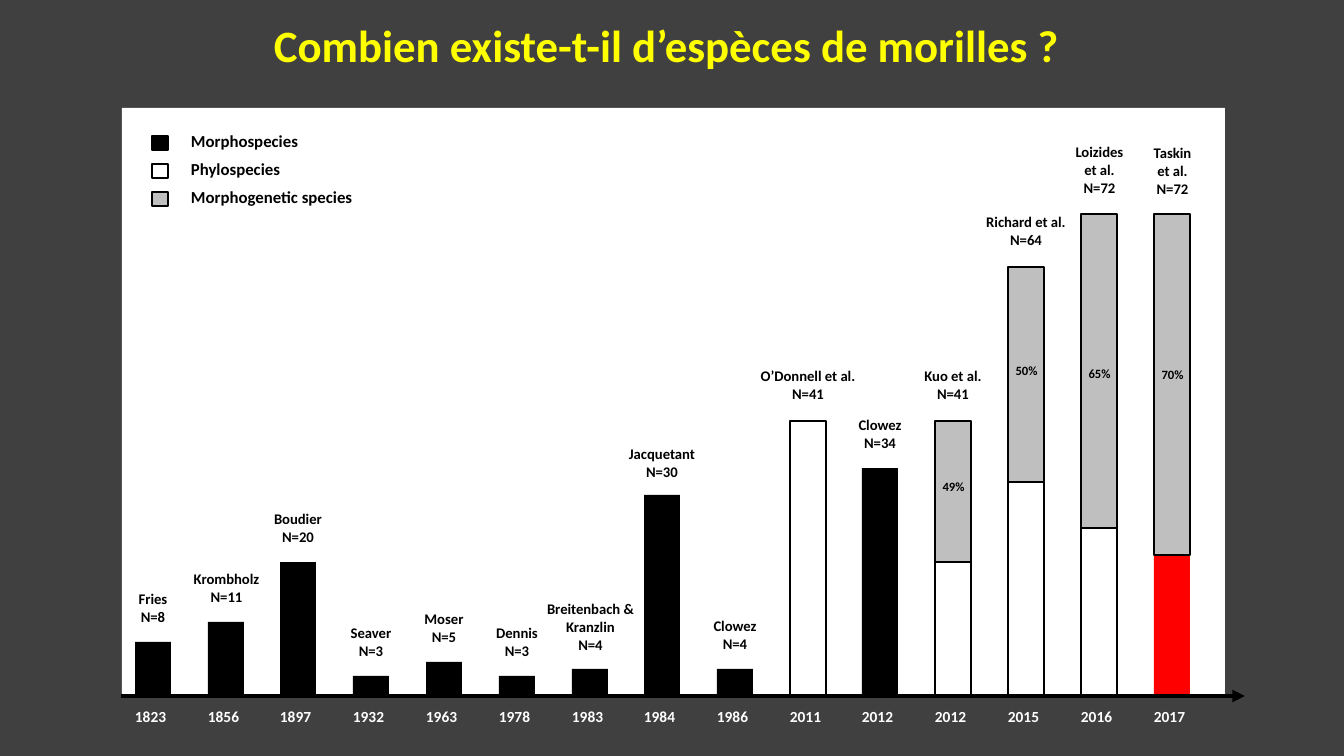
"""Builds a slide showing how many morel species each study recognised."""
from dataclasses import dataclass
from typing import NamedTuple

from lxml import etree
from pptx import Presentation
from pptx.dml.color import RGBColor
from pptx.enum.shapes import MSO_CONNECTOR, MSO_SHAPE
from pptx.enum.text import PP_ALIGN
from pptx.oxml.ns import qn
from pptx.util import Emu, Pt

RECTANGLE = MSO_SHAPE.RECTANGLE
STRAIGHT = MSO_CONNECTOR.STRAIGHT
LEFT, CENTER = PP_ALIGN.LEFT, PP_ALIGN.CENTER

SLIDE_WIDTH, SLIDE_HEIGHT = 1344, 756
EMU_PER_PX = 12192000 / SLIDE_WIDTH
BASELINE = 696
FIRST_BAR, BAR_STEP, BAR_WIDTH = 135, 72.75, 36
PX_PER_SPECIES = 6.7


@dataclass(frozen=True)
class Theme:
    """Colours and type sizes of the slide."""
    font: str = "Calibri"
    backdrop: str = "404040"
    panel: str = "FFFFFF"
    ink: str = "000000"
    title: str = "FFFF00"
    year: str = "FFFFFF"
    morpho: str = "000000"
    phylo: str = "FFFFFF"
    morphogenetic: str = "BFBFBF"
    highlight: str = "FF0000"
    title_size: float = 32
    legend_size: float = 12
    year_size: float = 11
    caption_size: float = 10.5
    share_size: float = 9
    caption_leading: float = 7.5
    caption_gap: float = 5.25
    outline: float = 1
    axis: float = 3


class Study(NamedTuple):
    """One bar: segments run upwards, rise is the caption's height above it."""
    year: str
    authors: tuple
    segments: tuple
    caption_width: int
    rise: int = 50
    share: str = ""
    share_top: int = 0
    wraps: bool = False


class MorelSlide:
    """Holds the theme and the current slide, and draws each kind of element."""

    def __init__(self, presentation, theme):
        """Add a blank slide with the theme's background."""
        self.theme = theme
        self.slide = presentation.slides.add_slide(presentation.slide_layouts[6])
        backdrop = self.slide.background.fill
        backdrop.solid()
        backdrop.fore_color.rgb = RGBColor.from_string(theme.backdrop)

    def frame(self, *lengths):
        """Turn px lengths into EMU."""
        return [Emu(round(length * EMU_PER_PX)) for length in lengths]

    def box(self, left, top, width, height, fill, outlined=False):
        """Draw a filled rectangle."""
        rect = self.slide.shapes.add_shape(RECTANGLE, *self.frame(left, top, width, height))
        rect.shadow.inherit = False
        rect.fill.solid()
        rect.fill.fore_color.rgb = RGBColor.from_string(fill)
        if outlined:
            rect.line.color.rgb = RGBColor.from_string(self.theme.ink)
            rect.line.width = Pt(self.theme.outline)
        else:
            rect.line.fill.background()

    def text(self, left, top, width, height, lines, size, color, align=LEFT, leadings=()):
        """Write bold lines, with a fixed leading for each line that has one."""
        frame = self.slide.shapes.add_textbox(*self.frame(left, top, width, height)).text_frame
        frame.word_wrap = True
        for number, line in enumerate(lines):
            paragraph = frame.add_paragraph() if number else frame.paragraphs[0]
            paragraph.alignment = align
            if number:
                paragraph.space_before = Pt(self.theme.caption_gap)
            if leadings and leadings[number]:
                paragraph.line_spacing = Pt(leadings[number])
            run = paragraph.add_run()
            run.text = line
            run.font.name = self.theme.font
            run.font.size = Pt(size)
            run.font.bold = True
            run.font.color.rgb = RGBColor.from_string(color)

    def arrow(self, start_x, start_y, end_x, end_y):
        """Draw the time axis with an arrowhead at its end."""
        axis = self.slide.shapes.add_connector(
            STRAIGHT, *self.frame(start_x, start_y, end_x, end_y))
        axis.line.color.rgb = RGBColor.from_string(self.theme.ink)
        axis.line.width = Pt(self.theme.axis)
        etree.SubElement(axis.line._get_or_add_ln(), qn("a:tailEnd"), type="triangle")
        etree.SubElement(axis._element.spPr, qn("a:effectLst"))

    def legend(self, entries):
        """List the kinds of species with their swatches."""
        for row, (label, fill) in enumerate(entries):
            self.box(152, 136 + 28 * row, 16, 14, fill, outlined=True)
            self.text(181, 126 + 28 * row, 206, 34, [label],
                      self.theme.legend_size, self.theme.ink)

    def study(self, index, study):
        """Draw a study's stacked bar, caption, share and year."""
        theme = self.theme
        left = round(FIRST_BAR + BAR_STEP * index)
        middle = left + BAR_WIDTH // 2
        total, top = 0, BASELINE
        for fill, species in study.segments:
            bottom = top
            total += species
            top = round(BASELINE - PX_PER_SPECIES * total)
            self.box(left, top, BAR_WIDTH, bottom - top, fill,
                     outlined=fill in (theme.phylo, theme.morphogenetic))
        lines = [*study.authors, f"N={total}"]
        leadings = [theme.caption_leading] * len(lines)
        if study.wraps:
            leadings[0] = None
        self.text(middle - study.caption_width // 2, top - study.rise, study.caption_width,
                  12 + 18 * len(lines), lines, theme.caption_size, theme.ink, CENTER, leadings)
        if study.share:
            self.text(middle - 25, study.share_top, 51, 28, [study.share],
                      theme.share_size, theme.ink, CENTER)
        self.text(left - 10, 702, 58, 29, [study.year], theme.year_size, theme.year)


def main():
    """Build and save the slide."""
    theme = Theme()
    morpho, phylo, mixed = theme.morpho, theme.phylo, theme.morphogenetic
    studies = [
        Study("1823", ("Fries",), ((morpho, 8),), 58),
        Study("1856", ("Krombholz",), ((morpho, 11),), 103),
        Study("1897", ("Boudier",), ((morpho, 20),), 82),
        Study("1932", ("Seaver",), ((morpho, 3),), 98),
        Study("1963", ("Moser",), ((morpho, 5),), 98),
        Study("1978", ("Dennis",), ((morpho, 3),), 76),
        Study("1983", ("Breitenbach & Kranzlin",), ((morpho, 4),), 113, 74, wraps=True),
        Study("1984", ("Jacquetant",), ((morpho, 30),), 100, 48),
        Study("1986", ("Clowez",), ((morpho, 4),), 98),
        Study("2011", ("O’Donnell et al.",), ((phylo, 41),), 136, 52),
        Study("2012", ("Clowez",), ((morpho, 34),), 98),
        Study("2012", ("Kuo et al.",), ((phylo, 20), (mixed, 21)), 100, 52, "49%", 474),
        Study("2015", ("Richard et al.",), ((phylo, 32), (mixed, 32)), 116, 52, "50%", 358),
        Study("2016", ("Loizides", "et al."), ((phylo, 25), (mixed, 47)), 121, 69, "65%", 361),
        Study("2017", ("Taskin", "et al."), ((theme.highlight, 21), (mixed, 51)), 121, 68,
              "70%", 362),
    ]
    presentation = Presentation()
    presentation.slide_width = Emu(round(SLIDE_WIDTH * EMU_PER_PX))
    presentation.slide_height = Emu(round(SLIDE_HEIGHT * EMU_PER_PX))
    morels = MorelSlide(presentation, theme)
    morels.text(264, 13, 814, 65, ["Combien existe-t-il d’espèces de morilles ?"],
                theme.title_size, theme.title)
    morels.box(122, 108, 1103, 588, theme.panel)
    morels.legend([("Morphospecies", morpho), ("Phylospecies", phylo),
                   ("Morphogenetic species", mixed)])
    for index, study in enumerate(studies):
        morels.study(index, study)
    morels.arrow(121, BASELINE, 1245, BASELINE)
    presentation.save("out.pptx")


if __name__ == "__main__":
    main()
